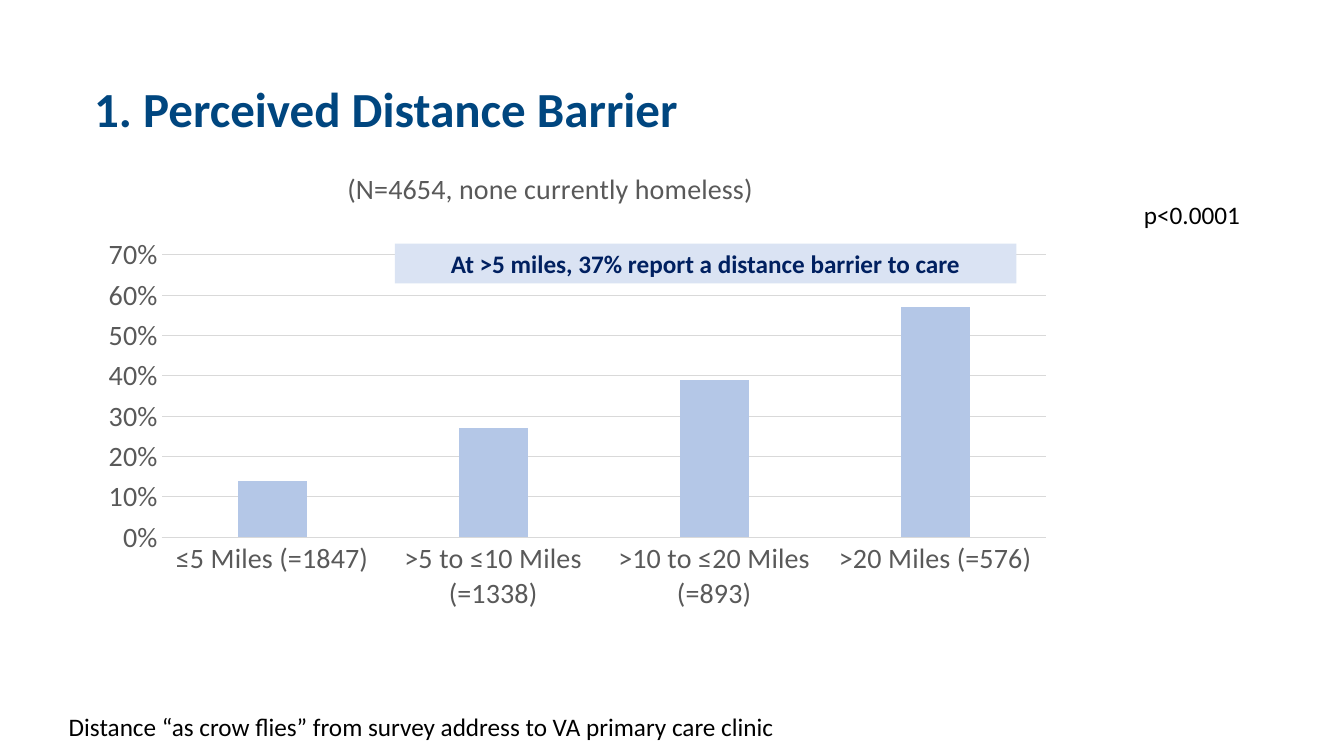
import dataclasses

import lxml.etree
import pptx
import pptx.chart.data
import pptx.dml.color
import pptx.enum.chart
import pptx.enum.text
import pptx.oxml
import pptx.oxml.ns
import pptx.util

RGB = pptx.dml.color.RGBColor
ALIGN = pptx.enum.text.PP_ALIGN
ANCHOR = pptx.enum.text.MSO_ANCHOR

EMU_PER_PX = 9525
FONT = "Calibri"
BLACK = RGB(0x00, 0x00, 0x00)
TITLE_BLUE = RGB(0x00, 0x46, 0x7F)
NAVY = RGB(0x00, 0x20, 0x60)
PALE_BLUE = RGB(0xDA, 0xE3, 0xF3)
BAR_BLUE = RGB(0xB4, 0xC7, 0xE7)
AXIS_GREY = RGB(0x59, 0x59, 0x59)
GRID_GREY = RGB(0xD9, 0xD9, 0xD9)

BARRIER_BY_DISTANCE = {
    "≤5 Miles (=1847)": 0.14,
    ">5 to ≤10 Miles (=1338)": 0.27,
    ">10 to ≤20 Miles (=893)": 0.39,
    ">20 Miles (=576)": 0.57,
}


@dataclasses.dataclass(frozen=True)
class Box:
    x: int
    y: int
    w: int
    h: int

    def emu(self) -> tuple[int, ...]:
        return tuple(v * EMU_PER_PX for v in dataclasses.astuple(self))


@dataclasses.dataclass(frozen=True)
class Label:
    text: str
    box: Box
    color: RGB = BLACK
    bold: bool = False
    align: ALIGN = ALIGN.LEFT
    fill: RGB | None = None


LABELS = [
    Label("Distance “as crow flies” from survey address to VA primary care clinic",
          Box(56, 673, 784, 38)),
    Label("p<0.0001", Box(1080, 185, 152, 38)),
    Label("At >5 miles, 37% report a distance barrier to care",
          Box(376, 232, 592, 38), NAVY, True, ALIGN.CENTER, PALE_BLUE),
]


def style_font(font, size: int, color: RGB, bold: bool = False) -> None:
    font.name = FONT
    font.size = pptx.util.Pt(size)
    font.bold = bold
    font.color.rgb = color


def set_text(tf, text: str, *, size: int = 18, color: RGB = BLACK, bold: bool = False,
             align: ALIGN = ALIGN.LEFT, anchor: ANCHOR = ANCHOR.TOP,
             spacing: float = 1.0) -> None:
    tf.word_wrap = True
    tf.vertical_anchor = anchor
    p = tf.paragraphs[0]
    p.alignment = align
    p.line_spacing = spacing
    r = p.add_run()
    r.text = text
    style_font(r.font, size, color, bold)


def add_label(s, label: Label) -> None:
    sp = s.shapes.add_textbox(*label.box.emu())
    if label.fill is not None:
        sp.fill.solid()
        sp.fill.fore_color.rgb = label.fill
    set_text(sp.text_frame, label.text, color=label.color, bold=label.bold,
             align=label.align)


def set_layout(parent, before: str, **settings: object) -> None:
    """Place a chart part by hand, with its layout after the named child."""
    for old in parent.findall(pptx.oxml.ns.qn("c:layout")):
        parent.remove(old)
    layout = lxml.etree.Element(pptx.oxml.ns.qn("c:layout"))
    manual = lxml.etree.SubElement(layout, pptx.oxml.ns.qn("c:manualLayout"))
    for tag, value in settings.items():
        lxml.etree.SubElement(manual, pptx.oxml.ns.qn(f"c:{tag}")).set("val", str(value))
    previous = parent.find(pptx.oxml.ns.qn(before)) if before else None
    parent.insert(0 if previous is None else parent.index(previous) + 1, layout)


def style_axis(axis) -> None:
    axis.major_tick_mark = pptx.enum.chart.XL_TICK_MARK.NONE
    axis.minor_tick_mark = pptx.enum.chart.XL_TICK_MARK.NONE
    style_font(axis.tick_labels.font, 20, AXIS_GREY)


def style_line(line) -> None:
    line.color.rgb = GRID_GREY
    line.width = pptx.util.Pt(0.75)


def add_barrier_chart(s, box: Box) -> None:
    data = pptx.chart.data.CategoryChartData(number_format="0%")
    data.categories = list(BARRIER_BY_DISTANCE)
    data.add_series("Series 1", list(BARRIER_BY_DISTANCE.values()))
    chart = s.shapes.add_chart(
        pptx.enum.chart.XL_CHART_TYPE.COLUMN_CLUSTERED, *box.emu(), data).chart
    style_font(chart.font, 10, BLACK)
    chart.has_legend = False
    chart.has_title = True
    set_text(chart.chart_title.text_frame, "(N=4654, none currently homeless)",
             size=20, color=AXIS_GREY, align=ALIGN.CENTER)
    title = chart.chart_title._element
    set_layout(title, "c:tx", xMode="edge", yMode="edge", x=0.31, y=0.07)
    set_layout(chart._chartSpace.chart.plotArea, "", layoutTarget="inner",
               xMode="edge", yMode="edge", x=0.138, y=0.238, w=0.842, h=0.521)

    plot = chart.plots[0]
    plot.gap_width = 219
    plot.overlap = -27
    plot.vary_by_categories = False
    bars = plot.series[0].format.fill
    bars.solid()
    bars.fore_color.rgb = BAR_BLUE

    style_axis(chart.category_axis)
    style_line(chart.category_axis.format.line)
    values = chart.value_axis
    style_axis(values)
    values.minimum_scale = 0
    values.maximum_scale = 0.7
    values.major_unit = 0.1
    values.tick_labels.number_format = "0%"
    values.tick_labels.number_format_is_linked = False
    values.format.line.fill.background()
    style_line(values.major_gridlines.format.line)


def main() -> None:
    prs = pptx.Presentation()
    prs.slide_width = 1280 * EMU_PER_PX
    prs.slide_height = 720 * EMU_PER_PX
    s = prs.slides.add_slide(prs.slide_layouts.get_by_name("Title Only"))
    add_barrier_chart(s, Box(16, 120, 1000, 516))
    title = s.shapes.title
    title.left, title.top, title.width, title.height = Box(80, 60, 920, 92).emu()
    set_text(title.text_frame, "1. Perceived Distance Barrier", size=35,
             color=TITLE_BLUE, bold=True, anchor=ANCHOR.MIDDLE, spacing=0.9)
    for label in LABELS:
        add_label(s, label)
    prs.save("out.pptx")


if __name__ == "__main__":
    main()
